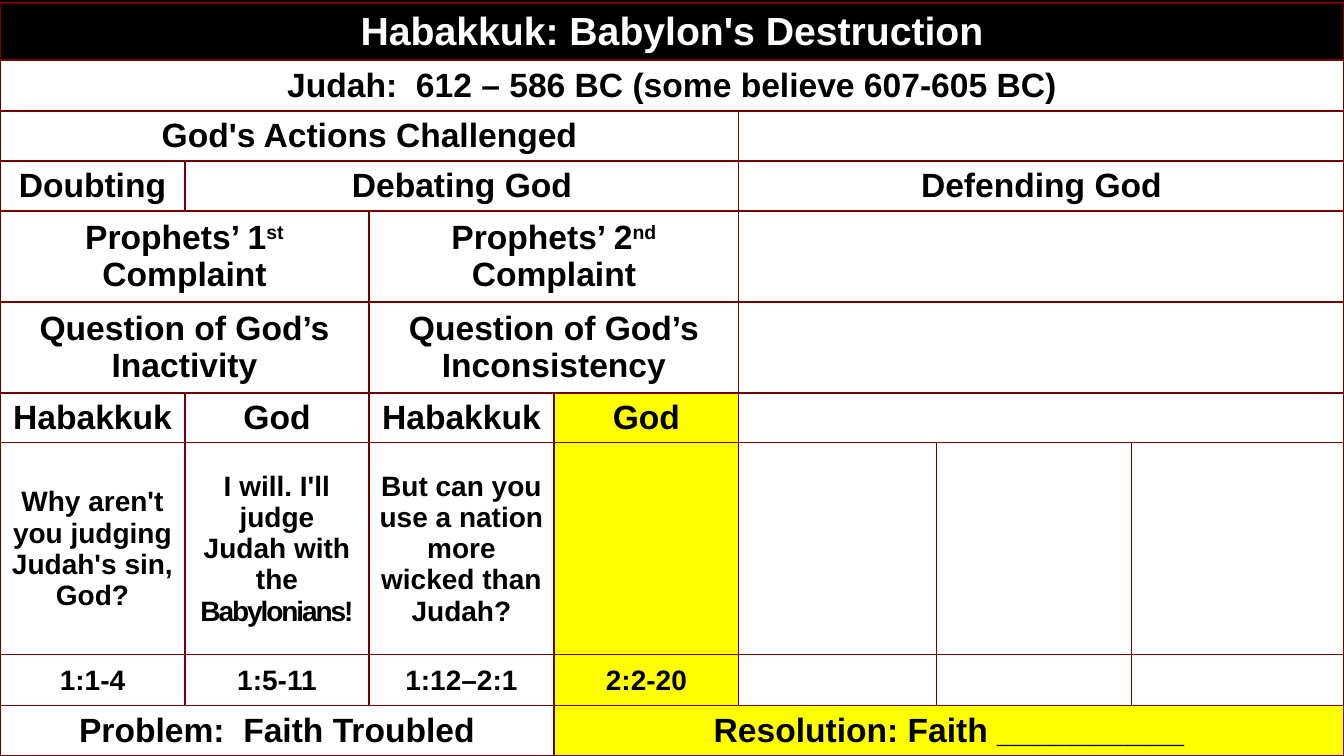
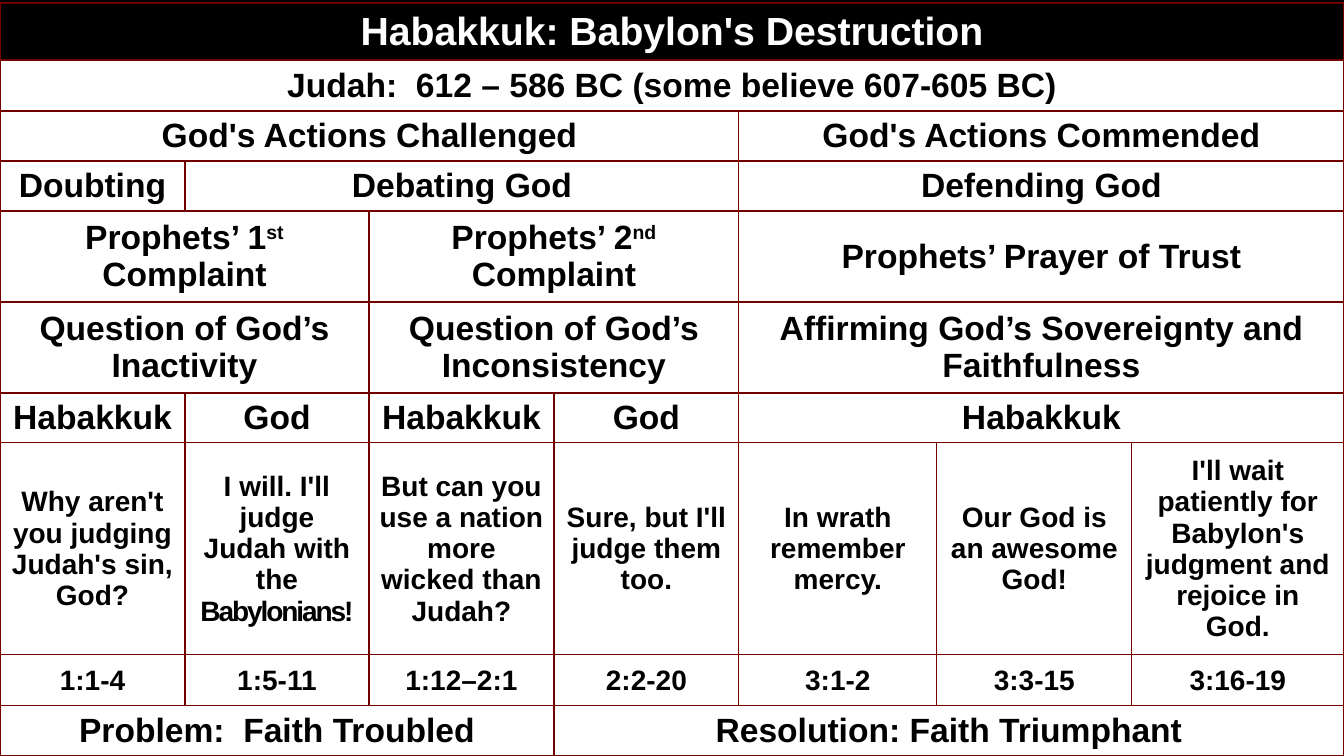
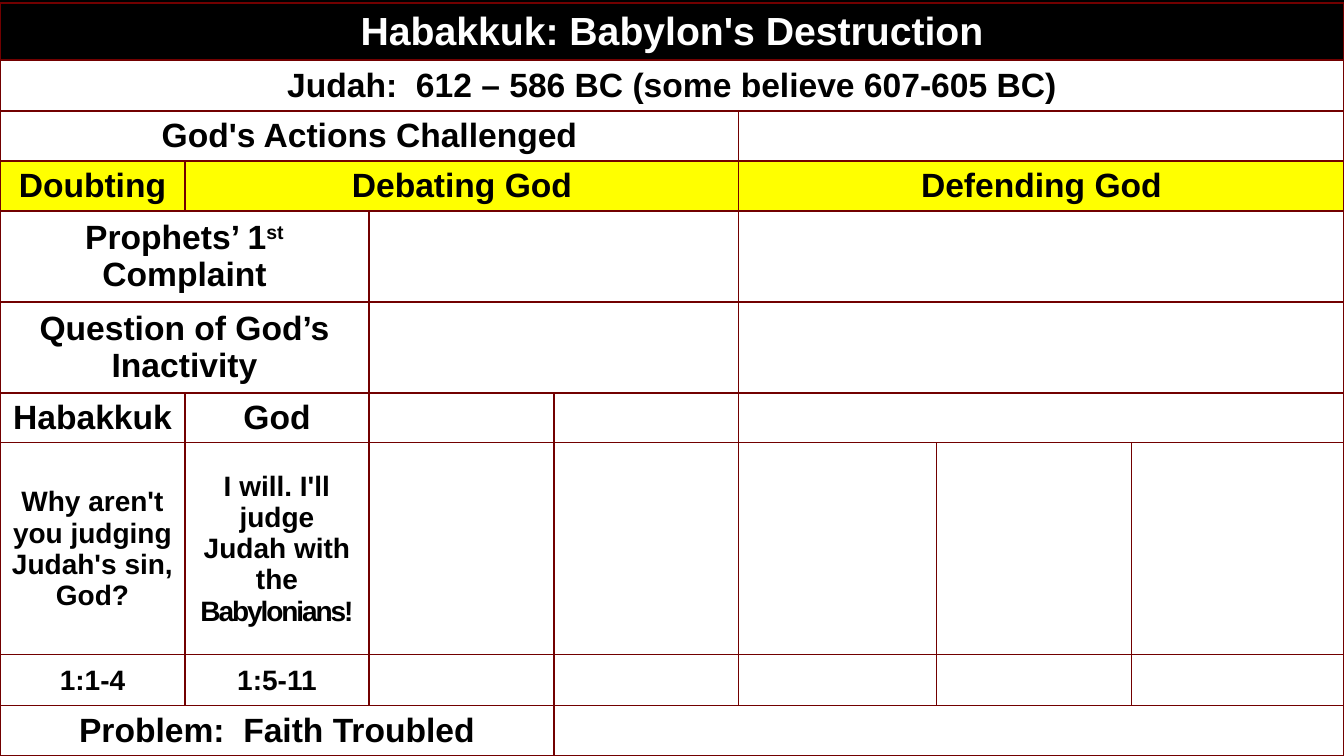
from dataclasses import dataclass

from lxml import etree
from pptx import Presentation
from pptx.dml.color import RGBColor
from pptx.enum import text
from pptx.oxml.ns import qn
from pptx import util as u


@dataclass(frozen=True)
class Theme:
    font: str = "Arial"
    ink: str = "000000"
    paper: str = "FFFFFF"
    highlight: str = "FFFF00"
    border: str = "720000"
    title_size: int = 28
    heading_size: int = 24
    detail_size: int = 20


THEME = Theme()
PX = 12192000 / 1344  # EMU per px
SLIDE_W, SLIDE_H = 1344, 756
TABLE_TOP = 3
COLS = [185, 184, 185, 185, 198, 195, 212]
HEIGHTS = [57, 51, 50, 50, 91, 91, 50, 212, 51, 50]
DETAIL_ROWS = (7, 8)

# Each cell is (columns spanned, text); text with run attributes is a list of
# (run text, attributes) pairs.
RAISED = {"baseline": "30000"}
TIGHT = {"spc": "-150"}
CHART = [
    [(7, "Habakkuk: Babylon's Destruction")],
    [(7, "Judah:  612 – 586 BC (some believe 607-605 BC)")],
    [(4, "God's Actions Challenged"), (3, "God's Actions Commended")],
    [(1, "Doubting"), (3, "Debating God"), (3, "Defending God")],
    [(2, [("Prophets’ 1", {}), ("st", RAISED), (" Complaint", {})]),
     (2, [("Prophets’ 2", {}), ("nd", RAISED), (" Complaint", {})]),
     (3, "Prophets’ Prayer of Trust")],
    [(2, "Question of God’s Inactivity"), (2, "Question of God’s Inconsistency"),
     (3, "Affirming God’s Sovereignty and Faithfulness")],
    [(1, "Habakkuk"), (1, "God"), (1, "Habakkuk"), (1, "God"), (3, "Habakkuk")],
    [(1, "Why aren't you judging Judah's sin, God?"),
     (1, [("I will. I'll judge Judah with the ", {}), ("Babylonians!", TIGHT)]),
     (1, "But can you use a nation more wicked than Judah?"),
     (1, "Sure, but I'll judge them too."),
     (1, "In wrath remember mercy."),
     (1, "Our God is an awesome God!"),
     (1, "I'll wait patiently for Babylon's judgment and rejoice in God.")],
    [(1, verses) for verses in
     ("1:1-4", "1:5-11", "1:12–2:1", "2:2-20", "3:1-2", "3:3-15", "3:16-19")],
    [(3, "Problem:  Faith Troubled"), (4, "Resolution: Faith Triumphant")],
]

# Cells are addressed as (row, first column); "changed" replaces the chart text.
SLIDES = [
    {"changed": {**dict.fromkeys([(2, 4), (4, 4), (5, 4), (6, 4), (7, 3)], ""),
                 **{(r, c): "" for r in DETAIL_ROWS for c in (4, 5, 6)},
                 (9, 3): "Resolution: Faith __________"},
     "highlighted": {(6, 3), (7, 3), (8, 3), (9, 3)}},
    {"changed": {}, "highlighted": set()},
    {"changed": {**{(r, c): "" for r in (4, 5, 6) for c in (2, 4)},
                 **{(r, c): "" for r in DETAIL_ROWS for c in range(2, 7)},
                 **dict.fromkeys([(2, 4), (6, 3), (9, 3)], "")},
     "highlighted": {(3, 0), (3, 1), (3, 4)}},
]


def px(n):
    return u.Emu(round(n * PX))


def set_borders(cell):
    tcPr = cell._tc.get_or_add_tcPr()
    for side in ("a:lnL", "a:lnR", "a:lnT", "a:lnB"):
        ln = etree.SubElement(tcPr, qn(side), w=str(u.Pt(1)))
        fill = etree.SubElement(ln, qn("a:solidFill"))
        etree.SubElement(fill, qn("a:srgbClr"), val=THEME.border)


def write_cell(cell, content, size, color):
    cell.vertical_anchor = text.MSO_ANCHOR.MIDDLE
    if not content:
        return
    p = cell.text_frame.paragraphs[0]
    p.alignment = text.PP_ALIGN.CENTER
    runs = [(content, {})] if isinstance(content, str) else content
    for words, attributes in runs:
        r = p.add_run()
        r.text = words
        r.font.name, r.font.size, r.font.bold = THEME.font, u.Pt(size), True
        r.font.color.rgb = RGBColor.from_string(color)
        for name, value in attributes.items():
            r._r.get_or_add_rPr().set(name, value)


def row_style(row):
    """Return the type size, text colour and fill of a row."""
    if row == 0:
        return THEME.title_size, THEME.paper, THEME.ink
    size = THEME.detail_size if row in DETAIL_ROWS else THEME.heading_size
    return size, THEME.ink, THEME.paper


def add_chart_slide(prs, changed, highlighted):
    s = prs.slides.add_slide(prs.slide_layouts[6])
    table = s.shapes.add_table(len(HEIGHTS), len(COLS), 0, px(TABLE_TOP),
                               px(sum(COLS)), px(sum(HEIGHTS))).table
    table.first_row = table.horz_banding = False
    for column, width in zip(table.columns, COLS):
        column.width = px(width)
    for row, height in zip(table.rows, HEIGHTS):
        row.height = px(height)
    for row, cells in enumerate(CHART):
        size, color, row_fill = row_style(row)
        col = 0
        for span, content in cells:
            place = (row, col)
            fill = THEME.highlight if place in highlighted else row_fill
            for c in range(col, col + span):
                part = table.cell(row, c)
                set_borders(part)
                part.fill.solid()
                part.fill.fore_color.rgb = RGBColor.from_string(fill)
            cell = table.cell(row, col)
            if span > 1:
                cell.merge(table.cell(row, col + span - 1))
            write_cell(cell, changed.get(place, content), size, color)
            col += span


def main():
    prs = Presentation()
    prs.slide_width, prs.slide_height = px(SLIDE_W), px(SLIDE_H)
    background = prs.slide_master.background.fill
    background.solid()
    background.fore_color.rgb = RGBColor.from_string(THEME.ink)
    for slide in SLIDES:
        add_chart_slide(prs, **slide)
    prs.save("out.pptx")


if __name__ == "__main__":
    main()
